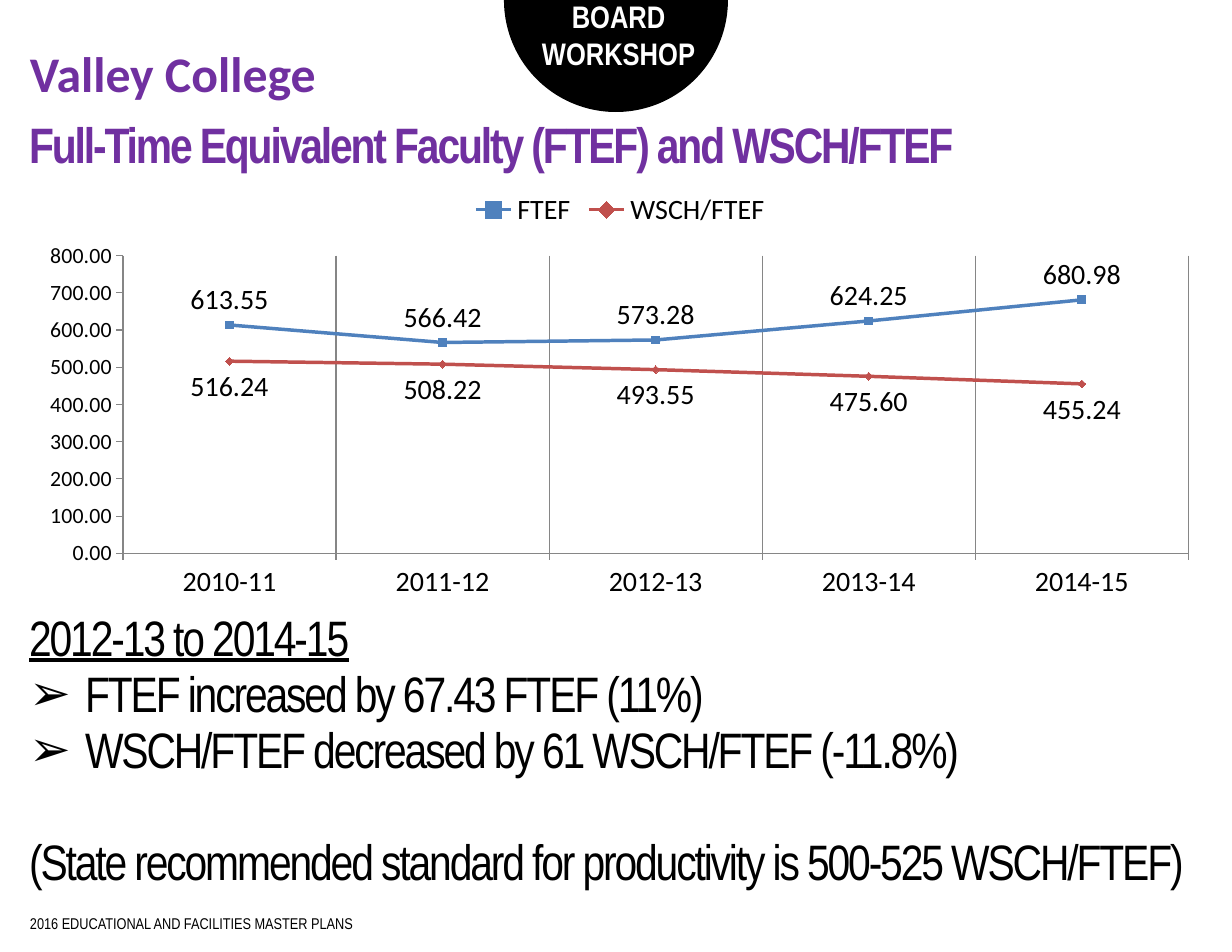
import pptx
import pptx.chart.data
import pptx.dml.color
import pptx.enum.chart
import pptx.enum.shapes
import pptx.enum.text
import pptx.oxml
import pptx.oxml.ns
import pptx.util
from dataclasses import dataclass

Cm, Pt = pptx.util.Cm, pptx.util.Pt
RGB = pptx.dml.color.RGBColor.from_string
XL = pptx.enum.chart
TXT = pptx.enum.text
qn = pptx.oxml.ns.qn


@dataclass(frozen=True)
class Theme:
    """Colours, fonts and type sizes of the slide."""
    black: str = "000000"
    white: str = "FFFFFF"
    purple: str = "7030A0"
    blue: str = "4F81BD"
    red: str = "C0504D"
    grid: str = "868686"
    narrow: str = "Arial Narrow"
    sans: str = "Calibri"
    heading: int = 32
    badge: int = 20
    label: int = 18
    axis: int = 14
    small: int = 10
    leading: int = 36
    spacing: float = -1.4


def apply(obj, values):
    """Set each named attribute of an object."""
    for name, value in values.items():
        setattr(obj, name, value)


class Deck:
    """Builds elements on the current slide in one theme."""

    def __init__(self, prs, theme):
        self.prs, self.t = prs, theme
        self.s = prs.slides.add_slide(prs.slide_layouts[1])

    def font(self, font, size, color, name, **extra):
        apply(font, {"size": Pt(size), "name": name, **extra})
        font.color.rgb = RGB(color)

    def place(self, sp, box):
        apply(sp, dict(zip(("left", "top", "width", "height"), map(Cm, box))))

    def frame(self, tf, wrap=True, inset=(0.25, 0.13)):
        x, y = map(Cm, inset)
        apply(tf, {"word_wrap": wrap, "auto_size": TXT.MSO_AUTO_SIZE.NONE,
                   "vertical_anchor": TXT.MSO_ANCHOR.TOP,
                   "margin_left": x, "margin_right": x,
                   "margin_top": y, "margin_bottom": y})

    def text(self, box, lines, size, color, name, align=TXT.PP_ALIGN.LEFT,
             wrap=True, **extra):
        sp = self.s.shapes.add_textbox(*map(Cm, box))
        tf = sp.text_frame
        self.frame(tf, wrap)
        for i, line in enumerate(lines):
            p = tf.paragraphs[0] if i == 0 else tf.add_paragraph()
            p.alignment = align
            r = p.add_run()
            r.text = line
            self.font(r.font, size, color, name, **extra)

    def circle(self, box, color):
        sp = self.s.shapes.add_shape(
            pptx.enum.shapes.MSO_SHAPE.OVAL, *map(Cm, box))
        sp.shadow.inherit = False
        sp.fill.solid()
        sp.fill.fore_color.rgb = RGB(color)
        sp.line.fill.background()

    def tight(self, p, text, color, bullet=None, before=0, **extra):
        pPr = p._p.get_or_add_pPr()
        indent = Cm(1.27) if bullet else 0
        pPr.set("marL", str(indent))
        pPr.set("indent", str(-indent))
        tag = pptx.oxml.ns.nsdecls("a")
        xml = f'<a:buChar {tag} char="{bullet}"/>' if bullet else f"<a:buNone {tag}/>"
        pPr.append(pptx.oxml.parse_xml(xml))
        apply(p, {"alignment": TXT.PP_ALIGN.LEFT, "line_spacing": Pt(self.t.leading),
                  "space_before": Pt(before), "space_after": Pt(0)})
        r = p.add_run()
        r.text = text
        self.font(r.font, self.t.heading, color, self.t.narrow, **extra)
        r._r.get_or_add_rPr().set("spc", str(round(self.t.spacing * 100)))

    def title(self, box, text):
        sp = self.s.shapes.title
        self.place(sp, box)
        self.frame(sp.text_frame)
        self.tight(sp.text_frame.paragraphs[0], text, self.t.purple, bold=True)

    def body(self, box, items):
        sp = self.s.placeholders[1]
        self.place(sp, box)
        tf = sp.text_frame
        self.frame(tf)
        for i, (text, style) in enumerate(items):
            p = tf.paragraphs[0] if i == 0 else tf.add_paragraph()
            self.tight(p, text, self.t.black, **style)

    def chart(self, box, cats, series, plot):
        t = self.t
        data = pptx.chart.data.CategoryChartData()
        data.categories = cats
        for name, values, *_ in series:
            data.add_series(name, values)
        chart = self.s.shapes.add_chart(
            XL.XL_CHART_TYPE.LINE_MARKERS, *map(Cm, box), data).chart
        self.font(chart.font, t.small, t.black, t.sans)
        apply(chart, {"has_title": False, "has_legend": True})
        apply(chart.legend, {"position": XL.XL_LEGEND_POSITION.TOP,
                             "include_in_layout": False})
        self.font(chart.legend.font, t.label, t.black, t.sans)
        for axis, size, grid in ((chart.category_axis, t.label, True),
                                 (chart.value_axis, t.axis, False)):
            apply(axis, {"has_major_gridlines": grid,
                         "major_tick_mark": XL.XL_TICK_MARK.OUTSIDE,
                         "minor_tick_mark": XL.XL_TICK_MARK.NONE})
            axis.format.line.color.rgb = RGB(t.grid)
            self.font(axis.tick_labels.font, size, t.black, t.sans)
        chart.category_axis.major_gridlines.format.line.color.rgb = RGB(t.grid)
        apply(chart.value_axis, {"minimum_scale": 0, "maximum_scale": 800,
                                 "major_unit": 100})
        apply(chart.value_axis.tick_labels, {"number_format": "#,##0.00",
                                             "number_format_is_linked": False})
        chart.plots[0].vary_by_categories = False
        for ser, (_, _, color, marker, pos, fmt) in zip(chart.plots[0].series, series):
            ser.smooth = False
            ser.format.line.width = Pt(2.25)
            ser.format.line.color.rgb = RGB(color)
            apply(ser.marker, {"style": marker, "size": 5})
            ser.marker.format.fill.solid()
            ser.marker.format.fill.fore_color.rgb = RGB(color)
            ser.marker.format.line.color.rgb = RGB(color)
            apply(ser.data_labels, {"show_value": True, "position": pos,
                                    "number_format": fmt,
                                    "number_format_is_linked": False})
            self.font(ser.data_labels.font, t.label, t.black, t.sans)
        self.layout(chart, plot)

    def layout(self, chart, plot):
        area = chart._chartSpace.find(".//" + qn("c:plotArea"))
        for old in area.findall(qn("c:layout")):
            area.remove(old)
        parts = "".join(f'<c:{k} val="{v}"/>' for k, v in plot.items())
        area.insert(0, pptx.oxml.parse_xml(
            f'<c:layout {pptx.oxml.ns.nsdecls("c")}><c:manualLayout>'
            '<c:layoutTarget val="inner"/><c:xMode val="edge"/><c:yMode val="edge"/>'
            f'{parts}</c:manualLayout></c:layout>'))


def main():
    """Build and save the faculty slide."""
    t = Theme()
    prs = pptx.Presentation()
    apply(prs, {"slide_width": Cm(27.94), "slide_height": Cm(21.59)})
    deck = Deck(prs, t)
    deck.text((0.43, 20.6, 23.06, 0.66), ["2016 EDUCATIONAL AND FACILITIES MASTER PLANS"],
              t.small, t.black, t.narrow)
    deck.circle((11.43, -2.54, 5.08, 5.08), t.black)
    deck.text((12.01, -0.2, 4.04, 1.96), ["BOARD", "WORKSHOP"], t.badge, t.white,
              t.narrow, TXT.PP_ALIGN.CENTER, False, bold=True)
    deck.title((0.41, 2.54, 27.1, 1.52),
               "Full-Time Equivalent Faculty (FTEF) and WSCH/FTEF")
    deck.body((0.41, 13.72, 27.53, 6.65), [
        ("2012-13 to 2014-15", {"underline": True}),
        ("FTEF increased by 67.43 FTEF (11%)", {"bullet": "➢"}),
        ("WSCH/FTEF decreased by 61 WSCH/FTEF (-11.8%)", {"bullet": "➢"}),
        ("(State recommended standard for productivity is 500-525 WSCH/FTEF)",
         {"before": t.leading}),
    ])
    mark, pos = XL.XL_MARKER_STYLE, XL.XL_LABEL_POSITION
    deck.chart((0.64, 4.06, 26.85, 9.65),
               ["2010-11", "2011-12", "2012-13", "2013-14", "2014-15"],
               [("FTEF", (613.55, 566.42, 573.28, 624.25, 680.98),
                 t.blue, mark.SQUARE, pos.ABOVE, "#,##0.00"),
                ("WSCH/FTEF", (516.24, 508.22, 493.55, 475.6, 455.24),
                 t.red, mark.DIAMOND, pos.BELOW, "0.00")],
               {"x": 0.08, "y": 0.18, "w": 0.9, "h": 0.7})
    deck.text((0.43, 0.84, 7.06, 1.63), ["Valley College"], t.heading, t.purple,
              t.sans, wrap=False, bold=True)
    prs.save("out.pptx")


if __name__ == "__main__":
    main()
